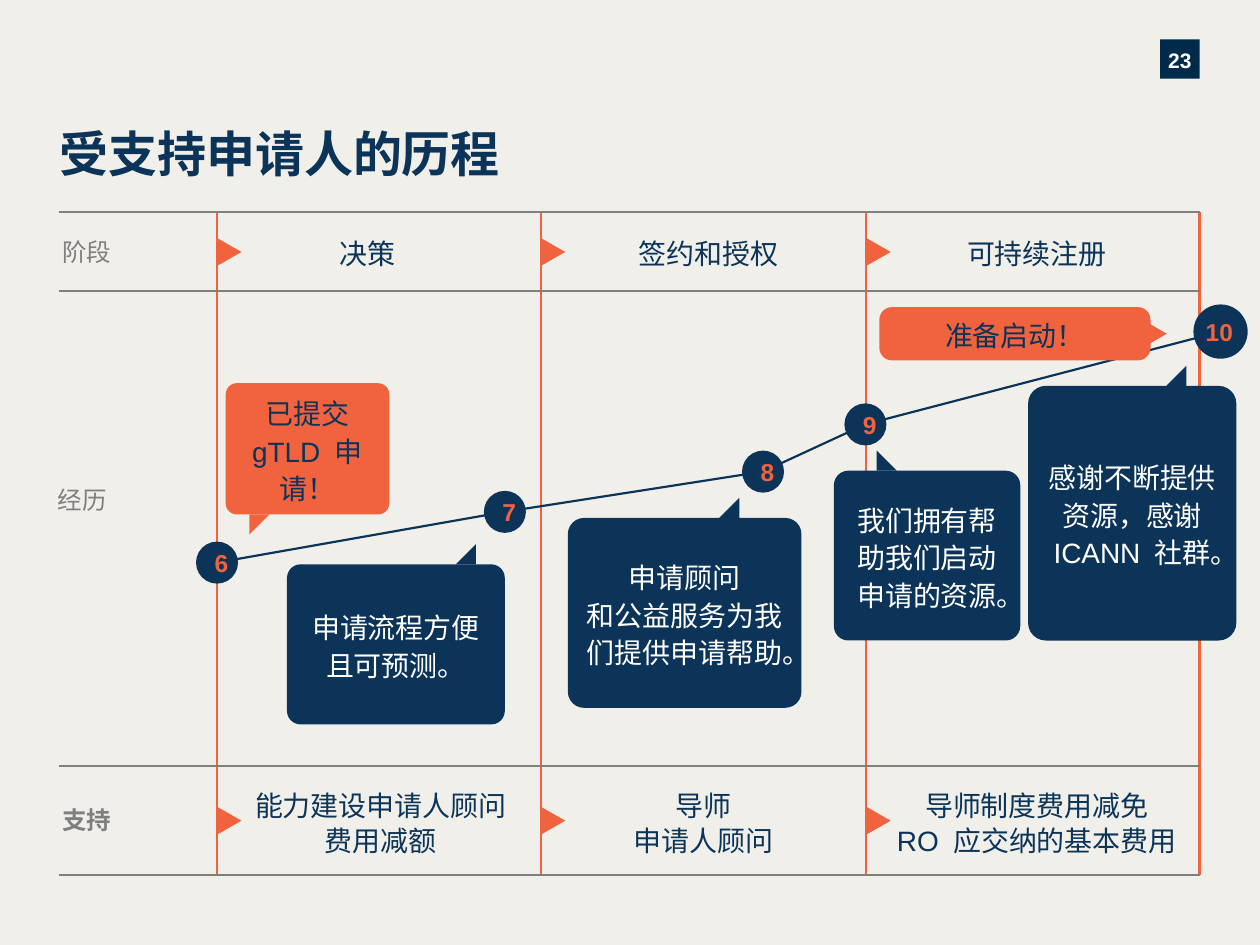
import pptx
import pptx.util
import pptx.dml.color
import pptx.enum.shapes
import pptx.enum.text
import pptx.oxml.ns
from collections import namedtuple
from itertools import pairwise
from lxml import etree

Pt = pptx.util.Pt
RGBColor = pptx.dml.color.RGBColor
SHAPE = pptx.enum.shapes.MSO_SHAPE
ALIGN = pptx.enum.text.PP_ALIGN
ANCHOR = pptx.enum.text.MSO_ANCHOR
AUTO_SIZE = pptx.enum.text.MSO_AUTO_SIZE

CREAM = RGBColor(0xF1, 0xEF, 0xEA)
NAVY = RGBColor(0x0B, 0x34, 0x58)
DEEP_NAVY = RGBColor(0x00, 0x2A, 0x49)
ORANGE = RGBColor(0xF1, 0x63, 0x3E)
GRAY = RGBColor(0x7F, 0x7F, 0x7F)
WHITE = RGBColor(0xFF, 0xFF, 0xFF)

Box = namedtuple("Box", "left top width height")
NO_INSETS = (0, 0, 0, 0)
USUAL_INSETS = (7.2, 3.6, 7.2, 3.6)
BUBBLE_INSETS = (5.8, 2.9, 5.8, 2.9)

GRID = Box(34, 121, 652, 379)
COLUMN_LINES = (124, 309, 495, 685.5)
ROW_LINES = (121, 166.5, 437.5, 500)
TAIL = 11.5


def write(shape, text, size, color, bold=False, align=ALIGN.CENTER,
          anchor=ANCHOR.MIDDLE, insets=NO_INSETS, spacing=None):
    frame = shape.text_frame
    frame.word_wrap = True
    frame.auto_size = AUTO_SIZE.NONE
    frame.vertical_anchor = anchor
    frame.margin_left, frame.margin_top, frame.margin_right, frame.margin_bottom = map(Pt, insets)
    para = frame.paragraphs[0]
    para.alignment = align
    if spacing:
        para.line_spacing = spacing
    for number, line in enumerate(text.split("\n")):
        if number:
            para.add_line_break()
        span = para.add_run()
        span.text = line
        span.font.name = "Arial"
        span.font.size = Pt(size)
        span.font.bold = bold
        span.font.color.rgb = color


def add_filled(page, kind, box, color, rotation=0):
    shape = page.shapes.add_shape(kind, *map(Pt, box))
    shape.shadow.inherit = False
    shape.fill.solid()
    shape.fill.fore_color.rgb = color
    shape.line.fill.background()
    shape.rotation = rotation
    return shape


def add_line(page, start, end, color):
    line = page.shapes.add_connector(
        pptx.enum.shapes.MSO_CONNECTOR.STRAIGHT, *map(Pt, (*start, *end)))
    line.line.color.rgb = color
    line.line.width = Pt(1.25)
    properties = line._element.spPr
    etree.SubElement(properties, pptx.oxml.ns.qn("a:effectLst"))


def add_label(page, box, text, size, color, **style):
    label = page.shapes.add_textbox(*map(Pt, box))
    write(label, text, size, color, **style)


def add_header(page, title_box, badge_box):
    title = page.shapes.title
    title.left, title.top, title.width, title.height = map(Pt, title_box)
    write(title, "受支持申请人的历程", 28, NAVY, bold=True, align=ALIGN.LEFT, anchor=ANCHOR.TOP)
    badge = add_filled(page, SHAPE.RECTANGLE, badge_box, DEEP_NAVY)
    write(badge, "23", 12, WHITE, bold=True, spacing=1.08)


def add_grid(page, box):
    for x in COLUMN_LINES:
        add_line(page, (x, box.top), (x, box.top + box.height), ORANGE)
    for y in ROW_LINES:
        add_line(page, (box.left, y), (box.left + box.width, y), GRAY)


def add_row_names(page):
    for left, top, text, bold in ((35.5, 135.5, "阶段", False),
                                  (33, 277, "经历", False),
                                  (35.5, 460, "支持", True)):
        add_label(page, Box(left, top, 85, 17.5), text, 14, GRAY, bold=bold,
                  align=ALIGN.LEFT, anchor=ANCHOR.TOP)


def add_row(page, top, height, arrow_middle, cells):
    """One row of labels with an arrow at the start of each column."""
    for line_x, (left, width, insets, text) in zip(COLUMN_LINES, cells):
        add_label(page, Box(left, top, width, height), text, 16, NAVY,
                  insets=insets, spacing=1.06)
        add_filled(page, SHAPE.ISOSCELES_TRIANGLE,
                   Box(line_x - 1, arrow_middle - 7, 16, 14), ORANGE, rotation=90)


def add_path(page, steps):
    """Numbered circles joined centre to centre."""
    for (_, *start, _, _), (_, *end, _, _) in pairwise(steps):
        add_line(page, start, end, NAVY)
    for text, x, y, size, insets in steps:
        circle = add_filled(page, SHAPE.OVAL, Box(x - size / 2, y - size / 2, size, size), NAVY)
        write(circle, text, 14, ORANGE, bold=True, insets=insets)


def add_bubble(page, box, text, fill, color, corner=0.085):
    bubble = add_filled(page, SHAPE.ROUNDED_RECTANGLE, box, fill)
    bubble.adjustments[0] = corner
    write(bubble, text, 16, color, insets=BUBBLE_INSETS, spacing=1.12)


def add_bubbles(page):
    # Each tail turns its right angle to a corner: 0 lower left, 90 upper left, 270 lower right
    bubbles = (
        (Box(129, 219, 93.5, 75), "已提交 gTLD 申请！", ORANGE, NAVY, 142.5, 90),
        (Box(164, 322.5, 124.5, 91.5), "申请流程方便且可预测。", NAVY, WHITE, 260.5, 270),
        (Box(324.5, 296, 133.5, 108.5), "申请顾问\n和公益服务为我们提供申请帮助。",
         NAVY, WHITE, 411, 270),
        (Box(476.5, 269, 106.5, 97), "我们拥有帮助我们启动申请的资源。", NAVY, WHITE, 501, 0),
        (Box(587.5, 220.5, 119, 145.5), "感谢不断提供资源，感谢 ICANN 社群。",
         NAVY, WHITE, 666.5, 270),
    )
    for box, text, fill, color, tail_left, turn in bubbles:
        add_bubble(page, box, text, fill, color)
        tail_top = box.top + box.height if turn == 90 else box.top - TAIL
        add_filled(page, SHAPE.RIGHT_TRIANGLE, Box(tail_left, tail_top, TAIL, TAIL), fill, turn)
    # Launch bubble pointing at the last step
    add_bubble(page, Box(502.5, 175.5, 155, 30.5), "准备启动！", ORANGE, NAVY, corner=0.239)
    add_filled(page, SHAPE.ISOSCELES_TRIANGLE, Box(656.5, 186, 11, 9.5), ORANGE, rotation=90)


def main():
    deck = pptx.Presentation()
    deck.slide_width, deck.slide_height = Pt(720), Pt(540)
    page = deck.slides.add_slide(deck.slide_layouts.get_by_name("Title Only"))
    page.background.fill.solid()
    page.background.fill.fore_color.rgb = CREAM

    add_header(page, Box(34, 70.5, 459.5, 42), Box(663, 22.5, 22.5, 22.5))
    add_grid(page, GRID)
    add_row_names(page)

    # Phases and support
    add_row(page, 127.5, 33, 144, (
        (123, 174, NO_INSETS, "决策"),
        (318, 174, NO_INSETS, "签约和授权"),
        (505.5, 174, NO_INSETS, "可持续注册")))
    add_row(page, 442, 55.5, 469, (
        (120, 186.5, (8.6, 0, 0, 0), "能力建设申请人顾问\n费用减额"),
        (309, 186, USUAL_INSETS, "导师\n申请人顾问"),
        (499.5, 186, USUAL_INSETS, "导师制度费用减免\nRO 应交纳的基本费用")))

    # Journey
    add_path(page, (
        ("6", 124, 321.5, 24, USUAL_INSETS),
        ("7", 288.5, 292.5, 24, USUAL_INSETS),
        ("8", 436, 269.5, 24, USUAL_INSETS),
        ("9", 494.5, 242.5, 24, USUAL_INSETS),
        ("10", 697.5, 189.5, 31, (0, 0, 1.4, 0))))
    add_bubbles(page)

    deck.save("out.pptx")


if __name__ == "__main__":
    main()
